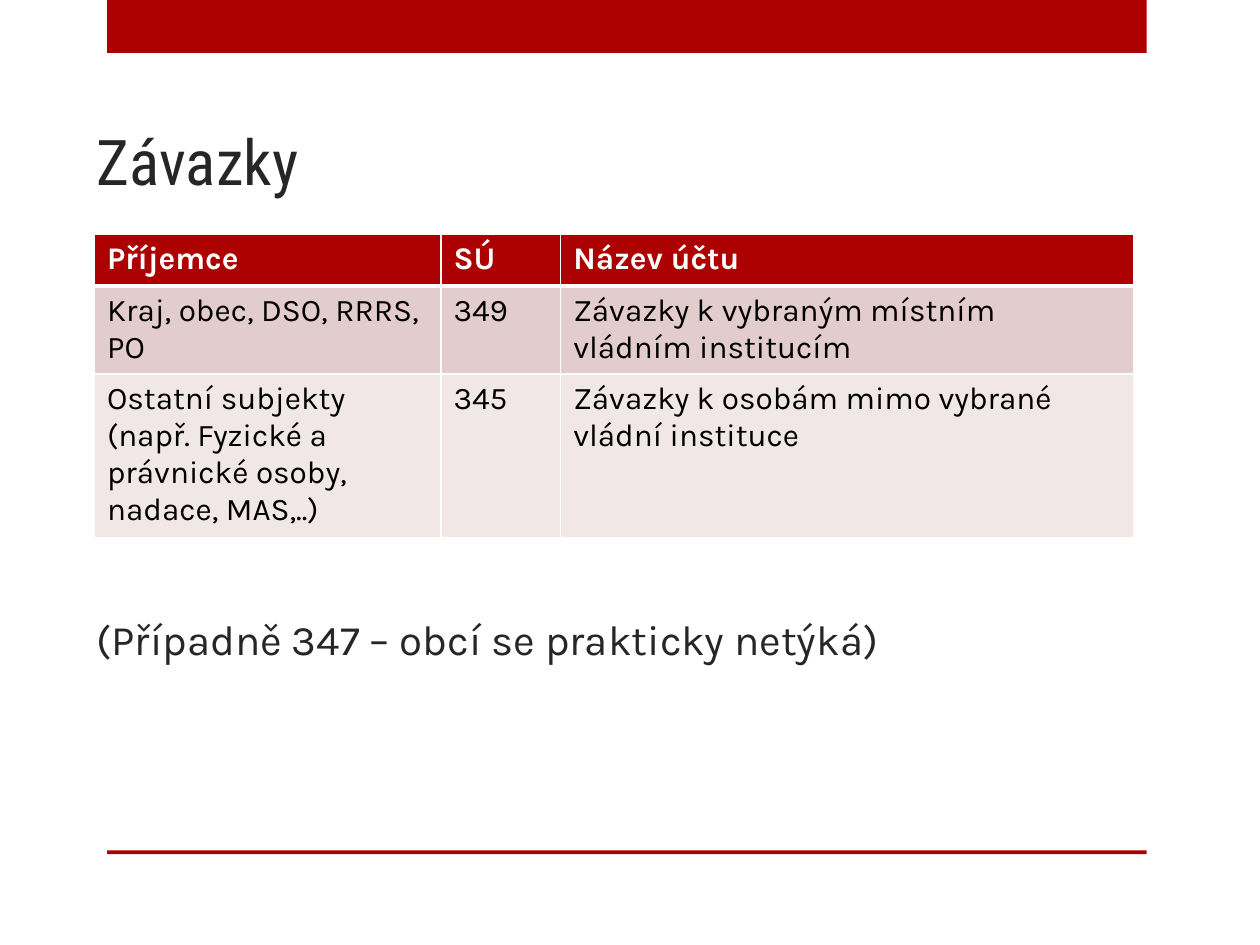
from dataclasses import dataclass

from lxml import etree
from pptx import Presentation
from pptx.dml.color import RGBColor
from pptx.enum.shapes import MSO_SHAPE
from pptx.enum.text import MSO_ANCHOR
from pptx.oxml.ns import qn
from pptx.util import Inches, Pt

RECTANGLE = MSO_SHAPE.RECTANGLE
BOTTOM = MSO_ANCHOR.BOTTOM
RED, INK, WHITE, BLACK = "AD0101", "262626", "FFFFFF", "000000"
HEADING_FONT, BODY_FONT = "Roboto Condensed", "Karla"
COLUMN_WIDTHS = (2.75, 0.95, 4.55)


@dataclass(frozen=True)
class Band:
    top: float
    height: float


@dataclass(frozen=True)
class Statement:
    text: str
    top: float
    size: int
    font: str


@dataclass(frozen=True)
class AccountRow:
    texts: tuple[str, str, str]
    height: float
    fill: str
    color: str = BLACK
    bold: bool = False
    top_border: int = 1
    bottom_border: int = 1


BANDS = (Band(0, 0.42), Band(6.75, 0.03))
STATEMENTS = (
    Statement("Závazky", 0.6, 36, HEADING_FONT),
    Statement("(Případně 347 – obcí se prakticky netýká)", 4.3, 24, BODY_FONT),
)
ACCOUNT_ROWS = (
    AccountRow(("Příjemce", "SÚ", "Název účtu"), 0.41, RED,
               color=WHITE, bold=True, bottom_border=3),
    AccountRow(("Kraj, obec, DSO, RRRS, PO", "349",
                "Závazky k vybraným místním vládním institucím"),
               0.41, "E3CCCC", top_border=3),
    AccountRow(("Ostatní subjekty (např. Fyzické a právnické osoby, nadace, MAS,..)",
                "345", "Závazky k osobám mimo vybrané vládní instituce"),
               0.81, "F1E7E7"),
)


def rgb(value: str) -> RGBColor:
    return RGBColor.from_string(value)


def write(frame, text: str, *, size: int, font: str, color: str, bold: bool = False) -> None:
    run = frame.paragraphs[0].add_run()
    run.text = text
    run.font.size = Pt(size)
    run.font.name = font
    run.font.bold = bold
    run.font.color.rgb = rgb(color)


def draw_band(slide, band: Band) -> None:
    bar = slide.shapes.add_shape(RECTANGLE, Inches(0.85), Inches(band.top),
                                 Inches(8.25), Inches(band.height))
    bar.shadow.inherit = False
    bar.fill.solid()
    bar.fill.fore_color.rgb = rgb(RED)
    bar.line.fill.background()


def draw_statement(slide, statement: Statement) -> None:
    box = slide.shapes.add_textbox(Inches(0.67), Inches(statement.top),
                                   Inches(8.58), Inches(1.02))
    frame = box.text_frame
    frame.word_wrap = True
    frame.vertical_anchor = BOTTOM
    write(frame, statement.text, size=statement.size, font=statement.font, color=INK)


def set_borders(cell, row: AccountRow) -> None:
    properties = cell._tc.get_or_add_tcPr()
    widths = {"L": 1, "R": 1, "T": row.top_border, "B": row.bottom_border}
    for side, width in widths.items():
        border = etree.SubElement(properties, qn(f"a:ln{side}"), w=str(Pt(width)))
        solid = etree.SubElement(border, qn("a:solidFill"))
        etree.SubElement(solid, qn("a:srgbClr"), val=WHITE)


def draw_accounts(slide) -> None:
    height = sum(row.height for row in ACCOUNT_ROWS)
    accounts = slide.shapes.add_table(
        len(ACCOUNT_ROWS), len(COLUMN_WIDTHS), Inches(0.75), Inches(1.86),
        Inches(sum(COLUMN_WIDTHS)), Inches(height)).table
    for column, width in zip(accounts.columns, COLUMN_WIDTHS):
        column.width = Inches(width)
    for table_row, row in zip(accounts.rows, ACCOUNT_ROWS):
        table_row.height = Inches(row.height)
        for cell, text in zip(table_row.cells, row.texts):
            set_borders(cell, row)
            cell.fill.solid()
            cell.fill.fore_color.rgb = rgb(row.fill)
            write(cell.text_frame, text, size=18, font=BODY_FONT,
                  color=row.color, bold=row.bold)


def main() -> None:
    presentation = Presentation()
    presentation.slide_width = Inches(10)
    presentation.slide_height = Inches(7.5)
    slide = presentation.slides.add_slide(presentation.slide_layouts[6])
    for band in BANDS:
        draw_band(slide, band)
    heading, remark = STATEMENTS
    draw_statement(slide, heading)
    draw_accounts(slide)
    draw_statement(slide, remark)
    presentation.save("out.pptx")


if __name__ == "__main__":
    main()
